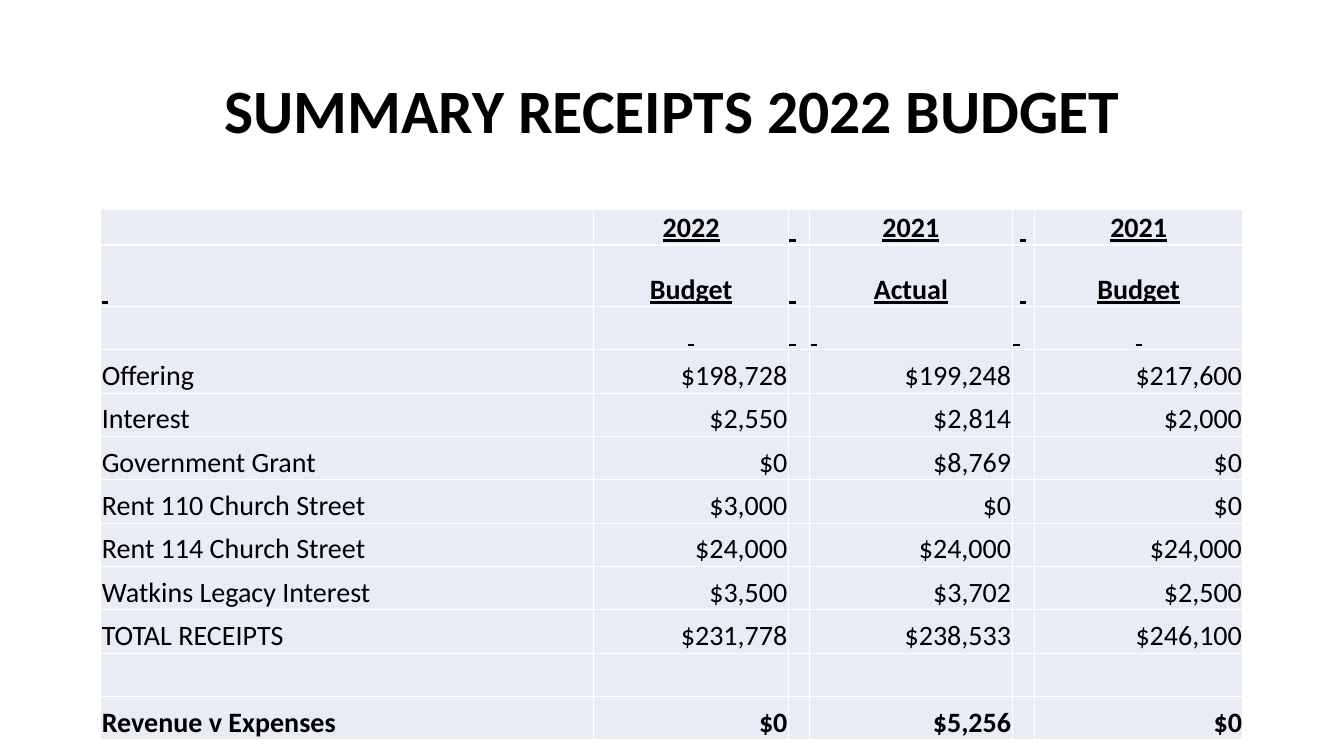
from dataclasses import dataclass

from lxml import etree
from pptx import Presentation
from pptx.dml.color import RGBColor
from pptx.enum import text
from pptx.oxml import ns
from pptx.util import Inches, Pt

LEFT, CENTER, RIGHT = text.PP_ALIGN.LEFT, text.PP_ALIGN.CENTER, text.PP_ALIGN.RIGHT


@dataclass(frozen=True)
class Theme:
    font: str = "Calibri"
    ink: str = "000000"
    cell: str = "E9EBF5"
    rule: str = "FFFFFF"
    title_size: int = 44
    body_size: int = 20
    rule_width: int = 1


def write(tf, words, *, theme, size, bold=False, underline=False, align=LEFT,
          spacing=None):
    """Fill a text frame with one formatted paragraph."""
    p = tf.paragraphs[0]
    p.alignment = align
    p.line_spacing = spacing
    r = p.add_run()
    r.text = words
    r.font.name = theme.font
    r.font.size = Pt(size)
    r.font.bold = bold
    r.font.underline = underline
    r.font.color.rgb = RGBColor.from_string(theme.ink)


class SlideBuilder:
    def __init__(self, prs, theme):
        self.theme = theme
        self.s = prs.slides.add_slide(prs.slide_layouts[5])

    def title(self, words, left, top, width, height):
        sp = self.s.shapes.title
        sp.left, sp.top = Inches(left), Inches(top)
        sp.width, sp.height = Inches(width), Inches(height)
        tf = sp.text_frame
        tf.word_wrap = True
        tf.auto_size = text.MSO_AUTO_SIZE.NONE
        tf.vertical_anchor = text.MSO_ANCHOR.MIDDLE
        write(tf, words, theme=self.theme, size=self.theme.title_size,
              bold=True, align=CENTER, spacing=0.9)

    def table(self, left, top, cols, heights, rows):
        """Each row maps a column to (words, format)."""
        frame = self.s.shapes.add_table(
            len(rows), len(cols), Inches(left), Inches(top),
            Inches(sum(cols)), Inches(sum(heights)))
        table = frame.table
        table.first_row = table.horz_banding = False
        for column, width in zip(table.columns, cols):
            column.width = Inches(width)
        for row, height, content in zip(table.rows, heights, rows):
            row.height = Inches(height)
            for i, cell in enumerate(row.cells):
                self.style_cell(cell)
                if i in content:
                    words, style = content[i]
                    write(cell.text_frame, words, theme=self.theme,
                          size=self.theme.body_size, **style)

    def style_cell(self, cell):
        cell.margin_left = cell.margin_right = cell.margin_top = Inches(0.01)
        cell.margin_bottom = 0
        cell.vertical_anchor = text.MSO_ANCHOR.BOTTOM
        tc_pr = cell._tc.get_or_add_tcPr()
        for side in ("a:lnL", "a:lnR", "a:lnT", "a:lnB"):
            ln = etree.SubElement(tc_pr, ns.qn(side), w=str(Pt(self.theme.rule_width)))
            fill = etree.SubElement(ln, ns.qn("a:solidFill"))
            etree.SubElement(fill, ns.qn("a:srgbClr"), val=self.theme.rule)
        cell.fill.solid()
        cell.fill.fore_color.rgb = RGBColor.from_string(self.theme.cell)


# Table content
COLS = [4.89, 1.93, 0.21, 2.01, 0.22, 2.07]
VALUE_COLS = (1, 3, 5)
MARK = " "  # no-break space, shows as a short underline

RECEIPTS = [
    ("Offering", "$198,728", "$199,248", "$217,600"),
    ("Interest", "$2,550", "$2,814", "$2,000"),
    ("Government Grant", "$0", "$8,769", "$0"),
    ("Rent 110 Church Street", "$3,000", "$0", "$0"),
    ("Rent 114 Church Street", "$24,000", "$24,000", "$24,000"),
    ("Watkins Legacy Interest", "$3,500", "$3,702", "$2,500"),
    ("TOTAL RECEIPTS", "$231,778", "$238,533", "$246,100"),
]
BALANCE = ("Revenue v Expenses", "$0", "$5,256", "$0")


def heading(words, align=CENTER):
    return words, dict(bold=True, underline=True, align=align)


def heading_row(*words):
    row = {i: heading(w) for i, w in zip(VALUE_COLS, words)}
    return row | {2: heading(MARK, LEFT), 4: heading(MARK)}


def value_row(label, *values, bold=False):
    row = {i: (v, dict(bold=bold, align=RIGHT)) for i, v in zip(VALUE_COLS, values)}
    return row | {0: (label, dict(bold=bold))}


def main():
    prs = Presentation()
    prs.slide_width, prs.slide_height = Inches(13.33), Inches(7.5)
    slide = SlideBuilder(prs, Theme())

    # Title
    slide.title("SUMMARY RECEIPTS 2022 BUDGET", 0.92, 0.4, 11.5, 1.45)

    # Column headings
    slide.table(1, 2.08, COLS, [0.35, 0.62], [
        heading_row("2022", "2021", "2021"),
        heading_row("Budget", "Actual", "Budget") | {0: heading(MARK, LEFT)},
    ])

    # Receipts, with a marked row above and an empty row before the balance
    marks = {i: heading(MARK, CENTER if i in (1, 5) else LEFT) for i in range(1, 6)}
    rows = [marks, *(value_row(*r) for r in RECEIPTS), {},
            value_row(*BALANCE, bold=True)]
    slide.table(1, 3.04, COLS, [0.43] * len(rows), rows)

    prs.save("out.pptx")


if __name__ == "__main__":
    main()
